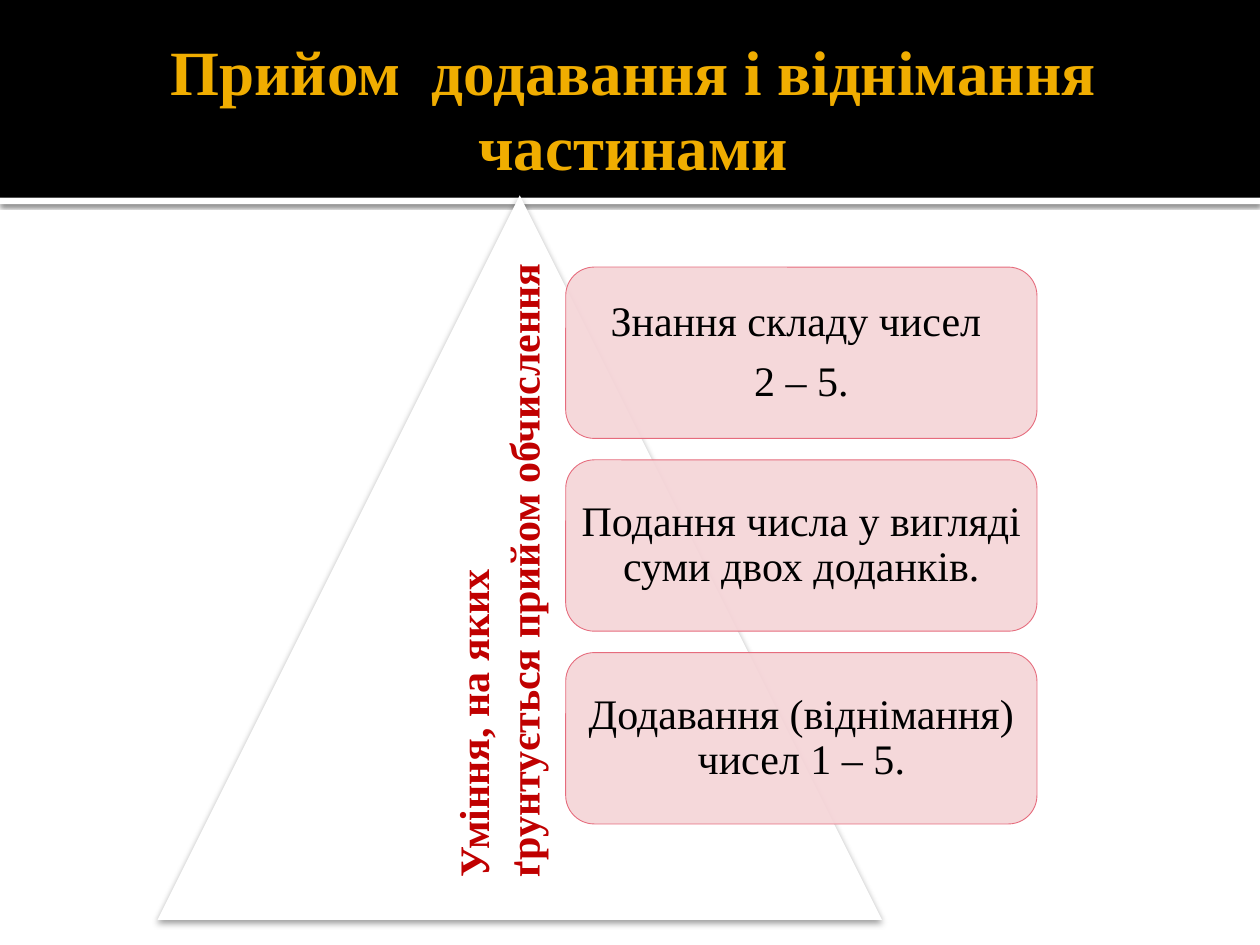
from lxml import etree
from pptx import Presentation
from pptx.dml.color import RGBColor
from pptx.enum import shapes, text
from pptx.oxml.ns import qn
from pptx.util import Inches, Pt

TITLE = "Прийом  додавання і віднімання частинами"
SIDE_LINES = ["Уміння, на яких", "ґрунтується прийом обчислення"]
SKILLS = [
    ["Знання складу чисел ", "2 – 5."],
    ["Подання числа у вигляді суми двох доданків."],
    ["Додавання (віднімання) чисел 1 – 5."],
]
COLORS = {
    "band": "000000", "paper": "FFFFFF", "title": "F0AD00", "side": "C00000",
    "card": "F5D4D7", "card_line": "E66C7D", "text": "000000",
}
FONT = "Times New Roman"
CARD_LEFT, CARD_TOP, CARD_WIDTH, CARD_HEIGHT, CARD_STEP = 4.49, 2.12, 3.74, 1.36, 1.53


def rgb(name):
    return RGBColor.from_string(COLORS[name])


def add_filled(kind, left, top, width, height, fill):
    shape = slide.shapes.add_shape(
        kind, Inches(left), Inches(top), Inches(width), Inches(height))
    shape.shadow.inherit = False
    shape.fill.solid()
    shape.fill.fore_color.rgb = rgb(fill)
    shape.line.fill.background()
    return shape


def add_alpha(color, percent):
    etree.SubElement(color, qn("a:alpha"), val=str(percent * 1000))


def drop_shadow(shape, percent, blur, distance):
    """Cast a black shadow straight down; blur and distance are in points."""
    effects = shape._element.spPr.find(qn("a:effectLst"))
    shadow = etree.SubElement(
        effects, qn("a:outerShdw"), blurRad=str(Pt(blur)), dist=str(Pt(distance)),
        dir="5400000", algn="ctr", rotWithShape="0")
    add_alpha(etree.SubElement(shadow, qn("a:srgbClr"), val="000000"), percent)


def set_insets(frame, left, top, right, bottom):
    frame.margin_left, frame.margin_top = Inches(left), Inches(top)
    frame.margin_right, frame.margin_bottom = Inches(right), Inches(bottom)


def write(frame, lines, size, color, bold=False, align=None):
    frame.word_wrap = True
    for index, line in enumerate(lines):
        para = frame.add_paragraph() if index else frame.paragraphs[0]
        para.text = line
        para.alignment = align
        para.font.name, para.font.size, para.font.bold = FONT, Pt(size), bold
        para.font.color.rgb = rgb(color)


deck = Presentation()
deck.slide_width, deck.slide_height = Inches(10), Inches(7.5)
slide = deck.slides.add_slide(deck.slide_layouts[5])
kinds = shapes.MSO_SHAPE

# Header band with its white rule
rule = add_filled(kinds.RECTANGLE, 0, 1.57, 10, 0.05, "paper")
drop_shadow(rule, 60, 2.5, 0.8)
add_filled(kinds.RECTANGLE, 0, 0, 10, 1.57, "band")

title = slide.shapes.title
slide.shapes._spTree.append(title._element)  # bring in front of the band
title.left, title.top = Inches(0.5), Inches(0.17)
title.width, title.height = Inches(9), Inches(1.37)
title.text_frame.vertical_anchor = text.MSO_ANCHOR.MIDDLE
title.text_frame.auto_size = text.MSO_AUTO_SIZE.NONE
set_insets(title.text_frame, 0.1, 0.05, 0.05, 0.05)
write(title.text_frame, [TITLE], 36, "title", True, text.PP_ALIGN.CENTER)

triangle = add_filled(kinds.ISOSCELES_TRIANGLE, 1.25, 1.55, 5.75, 5.75, "paper")
drop_shadow(triangle, 38, 3.5, 2)

for row, lines in enumerate(SKILLS):
    card = add_filled(kinds.ROUNDED_RECTANGLE, CARD_LEFT, CARD_TOP + row * CARD_STEP,
                      CARD_WIDTH, CARD_HEIGHT, "card")
    add_alpha(card._element.spPr.find(qn("a:solidFill"))[0], 90)
    card.line.color.rgb = rgb("card_line")
    card.line.width = Pt(0.5)
    frame = card.text_frame
    frame.vertical_anchor = text.MSO_ANCHOR.MIDDLE
    set_insets(frame, 0.03, 0.03, 0.03, 0.03)
    write(frame, lines, 24, "text", align=text.PP_ALIGN.CENTER)
    for para in frame.paragraphs:
        para.line_spacing = 0.9
        para.space_after = Pt(8.4)

side = slide.shapes.add_textbox(Inches(3.5), Inches(1.8), Inches(1.01), Inches(5.26))
side.text_frame._txBody.bodyPr.set("vert", "vert270")
write(side.text_frame, SIDE_LINES, 24, "side", True)

deck.save("out.pptx")
